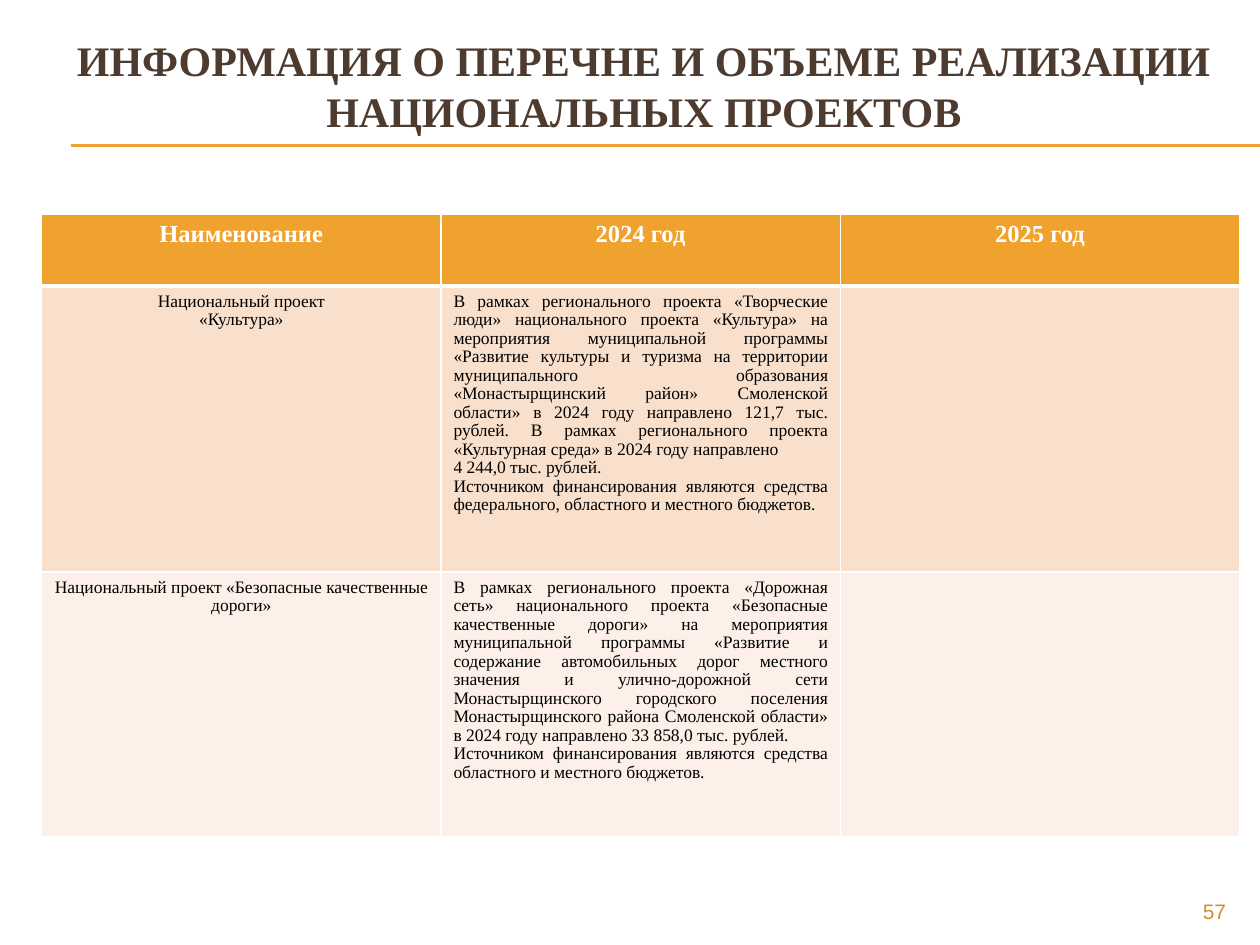
from lxml import etree
from pptx import Presentation
from pptx import util as u
from pptx.dml.color import RGBColor
from pptx.enum import shapes, text
from pptx.oxml.ns import qn

# Content
TITLE = "ИНФОРМАЦИЯ О ПЕРЕЧНЕ И ОБЪЕМЕ РЕАЛИЗАЦИИ НАЦИОНАЛЬНЫХ ПРОЕКТОВ"
PAGE = "57"
HEADER = [["Наименование"], ["2024 год"], ["2025 год"]]
PROJECTS = [
    [["Национальный проект", "«Культура»"],
     ["В рамках регионального проекта «Творческие люди» национального проекта "
      "«Культура» на мероприятия муниципальной программы «Развитие культуры и "
      "туризма на территории муниципального образования «Монастырщинский район» "
      "Смоленской области» в 2024 году направлено 121,7 тыс. рублей. В рамках "
      "регионального проекта «Культурная среда» в 2024 году направлено",
      "4 244,0 тыс. рублей.",
      "Источником финансирования являются средства федерального, областного и "
      "местного бюджетов."],
     []],
    [["Национальный проект «Безопасные качественные дороги»"],
     ["В рамках регионального проекта «Дорожная сеть» национального проекта "
      "«Безопасные качественные дороги» на мероприятия муниципальной программы "
      "«Развитие и содержание автомобильных дорог местного значения и "
      "улично-дорожной сети Монастырщинского городского поселения "
      "Монастырщинского района Смоленской области» в 2024 году направлено "
      "33 858,0 тыс. рублей.",
      "Источником финансирования являются средства областного и местного "
      "бюджетов."],
     []],
]

THEME = {
    "serif": "Times New Roman", "sans": "Arial",
    "title": "4E3B30", "accent": "F0A22E", "page": "D38E27",
    "white": "FFFFFF", "black": "000000",
    "bands": ["F9E0CD", "FCF0E8"],
    "title_pt": 24, "header_pt": 14, "body_pt": 10, "page_pt": 12,
}
ROW_HEIGHTS = [0.57, 2.27, 2.1]
COL_WIDTH = 3.17
RULES_Y = [1.15, 1.16]
AL = text.PP_ALIGN


def rgb(name):
    return RGBColor.from_string(THEME.get(name, name))


def write(tf, lines, font, size, color, align, bold=False, spacing=None):
    for i, line in enumerate(lines or [""]):
        p = tf.paragraphs[0] if i == 0 else tf.add_paragraph()
        if line:
            p.add_run().text = line
        p.alignment = align
        p.line_spacing = spacing
        p.font.name, p.font.size = THEME[font], u.Pt(THEME[size])
        p.font.bold, p.font.color.rgb = bold, rgb(color)


def add_text(s, box, lines, anchor, margin, *style, **more):
    tf = s.shapes.add_textbox(*map(u.Inches, box)).text_frame
    tf.word_wrap, tf.vertical_anchor = True, anchor
    tf.margin_left = tf.margin_right = u.Inches(margin)
    write(tf, lines, *style, **more)


def set_borders(cell, **widths):
    tc_pr = cell._tc.get_or_add_tcPr()
    for i, side in enumerate("LRTB"):
        ln = etree.Element(qn(f"a:ln{side}"), w=str(u.Pt(widths.get(side, 1))))
        fill = etree.SubElement(ln, qn("a:solidFill"))
        etree.SubElement(fill, qn("a:srgbClr"), val=THEME["white"])
        tc_pr.insert(i, ln)


def add_rules(s):
    for y in RULES_Y:
        ln = s.shapes.add_connector(shapes.MSO_CONNECTOR.STRAIGHT, u.Inches(0.56),
                                    u.Inches(y), u.Inches(10), u.Inches(y))
        ln.line.color.rgb, ln.line.width = rgb("accent"), u.Pt(0.75)
        etree.SubElement(ln._element.spPr, qn("a:effectLst"))


def add_projects(s):
    rows = [HEADER] + PROJECTS
    n = len(HEADER)
    tbl = s.shapes.add_table(len(rows), n, u.Inches(0.33), u.Inches(1.7),
                             u.Inches(COL_WIDTH * n), u.Inches(sum(ROW_HEIGHTS))).table
    for col in tbl.columns:
        col.width = u.Inches(COL_WIDTH)
    for r, row in enumerate(rows):
        tbl.rows[r].height = u.Inches(ROW_HEIGHTS[r])
        for c, lines in enumerate(row):
            cell = tbl.cell(r, c)
            cell.fill.solid()
            cell.fill.fore_color.rgb = rgb(THEME["bands"][r - 1] if r else "accent")
            if r == 0:
                write(cell.text_frame, lines, "serif", "header_pt", "white",
                      AL.CENTER, bold=True)
            else:
                write(cell.text_frame, lines, "serif", "body_pt", "black",
                      AL.JUSTIFY if c else AL.CENTER, spacing=0.96)
            # Thick line between the header and the first project
            set_borders(cell, T=3 if r == 1 else 1, B=3 if r == 0 else 1)


def main():
    prs = Presentation()
    prs.slide_width, prs.slide_height = u.Inches(10), u.Inches(7.5)
    s = prs.slides.add_slide(prs.slide_layouts[6])
    # Heading and rules
    add_rules(s)
    add_text(s, (0.5, 0.21, 9.22, 0.92), [TITLE], text.MSO_ANCHOR.MIDDLE, 0.05,
             "serif", "title_pt", "title", AL.CENTER, bold=True, spacing=1.03)
    # Projects by year
    add_projects(s)
    # Page number
    add_text(s, (9, 7.08, 0.83, 0.27), [PAGE], text.MSO_ANCHOR.TOP, 0.1,
             "sans", "page_pt", "page", AL.RIGHT)
    prs.save("out.pptx")


if __name__ == "__main__":
    main()
